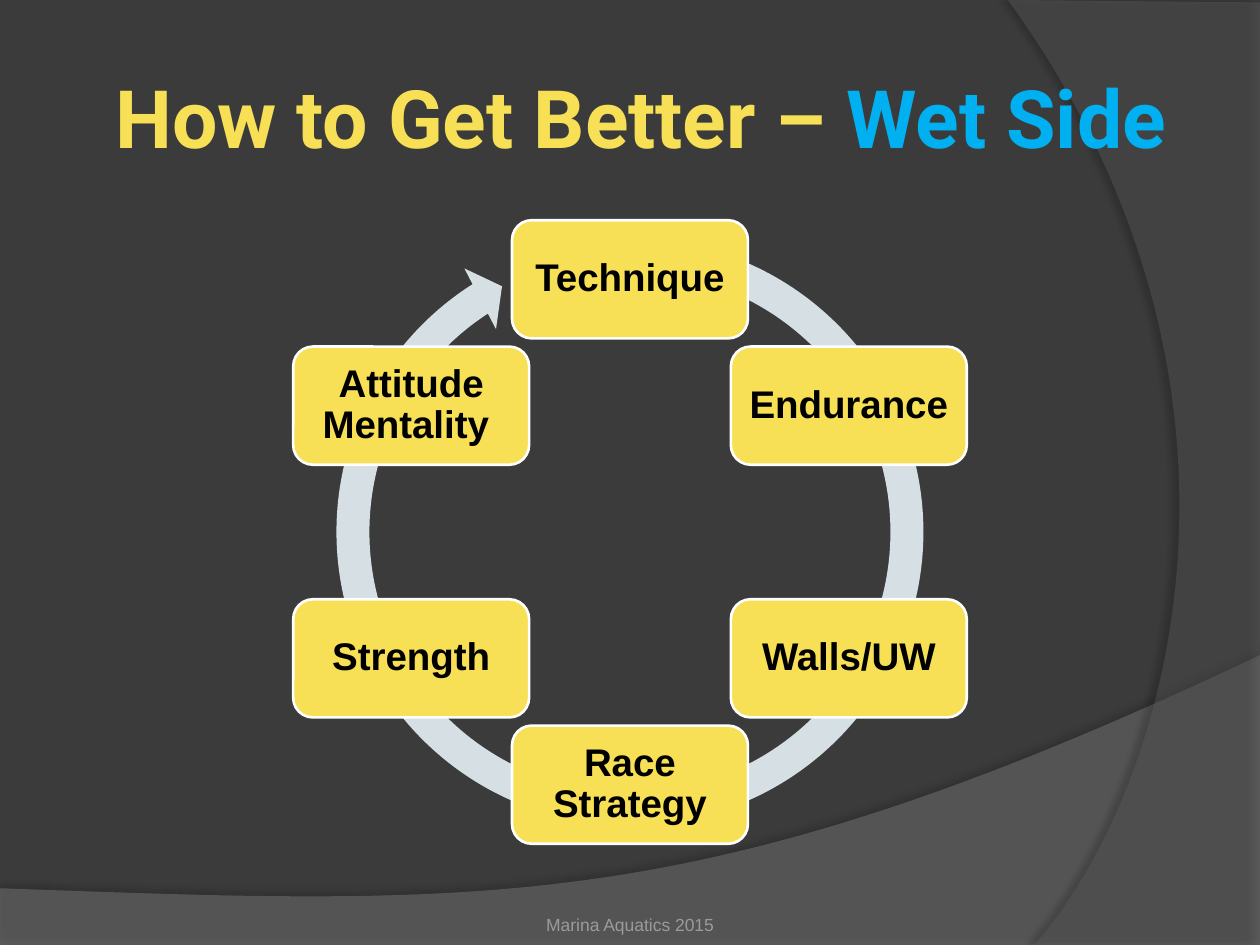
from dataclasses import dataclass
from math import cos, radians, sin

from lxml import etree
from pptx import Presentation
from pptx.dml.color import RGBColor
from pptx.enum.shapes import MSO_SHAPE
from pptx.enum.text import MSO_ANCHOR, PP_ALIGN
from pptx.oxml.ns import qn
from pptx.util import Pt

CENTER = PP_ALIGN.CENTER
MIDDLE = MSO_ANCHOR.MIDDLE
BOTTOM = MSO_ANCHOR.BOTTOM
ROUNDED = MSO_SHAPE.ROUNDED_RECTANGLE
CIRCULAR_ARROW = MSO_SHAPE.CIRCULAR_ARROW

CHARCOAL = RGBColor(0x3B, 0x3B, 0x3B)
WAVE_GRAY = RGBColor(0x7F, 0x7F, 0x7F)
CURVE_GRAY = RGBColor(0x5E, 0x5E, 0x5E)
YELLOW = RGBColor(0xF7, 0xDF, 0x56)
BLUE = RGBColor(0x00, 0xB0, 0xF0)
PALE_BLUE = RGBColor(0xD5, 0xDF, 0xE4)
WHITE = RGBColor(0xFF, 0xFF, 0xFF)
BLACK = RGBColor(0x00, 0x00, 0x00)
FOOTER_GRAY = RGBColor(0x9D, 0x9B, 0x9A)

CENTER_X, CENTER_Y, RADIUS = 360, 304, 144.4
NODE_WIDTH, NODE_HEIGHT = 134.8, 67.5
ARROW_SIZE = 355.7
ARROW_ADJUSTMENTS = (0.053, 3.126, 142.371, 171.218, 0.055)
TOPICS = ("Technique", "Endurance", "Walls/UW", "Race Strategy", "Strength", "Attitude Mentality ")
CURVE_STEPS = 60

Point = tuple[float, float]


@dataclass(frozen=True)
class Span:
    text: str
    font: str
    size: float
    color: RGBColor
    bold: bool = False


@dataclass(frozen=True)
class Label:
    left: float
    top: float
    width: float
    height: float
    anchor: MSO_ANCHOR
    margins: tuple[float, float, float, float]
    spans: tuple[Span, ...]


@dataclass(frozen=True)
class Backdrop:
    corners: tuple[Point, ...]
    curve: tuple[Point, Point, Point]
    color: RGBColor
    opacity: int
    shadow_opacity: int
    shadow_distance: float
    shadow_angle: int


BACKDROPS = (
    Backdrop(((0, 507.6), (0, 540), (720, 540), (720, 374.4)),
             ((402.5, 524.9), (281.5, 517.7), (0, 507.6)), WAVE_GRAY, 45, 35, 3.5, 270),
    Backdrop(((720, 1.4), (720, 540), (591.1, 540)),
             ((673.2, 445.7), (733, 216), (576, 0)), CURVE_GRAY, 40, 45, 4, 180),
)
LABELS = (
    Label(36, 21.6, 660.2, 90, MIDDLE, (3.6, 3.6, 3.6, 3.6),
          (Span("How to Get Better – ", "Roboto", 46, YELLOW, True),
           Span("Wet Side", "Roboto", 46, BLUE, True))),
    Label(246, 505.4, 228, 28.8, BOTTOM, (0, 3.6, 0, 0),
          (Span("Marina Aquatics 2015", "Arial", 10, FOOTER_GRAY),)),
)


def curve_points(start: Point, curve: tuple[Point, Point, Point]) -> list[Point]:
    points = []
    for step in range(1, CURVE_STEPS + 1):
        t = step / CURVE_STEPS
        weights = ((1 - t) ** 3, 3 * t * (1 - t) ** 2, 3 * t * t * (1 - t), t ** 3)
        x, y = (sum(w * p[axis] for w, p in zip(weights, (start, *curve))) for axis in (0, 1))
        points.append((Pt(x), Pt(y)))
    return points


def add_alpha(color_element, percent: int) -> None:
    etree.SubElement(color_element, qn("a:alpha"), val=str(percent * 1000))


def draw_backdrop(page, backdrop: Backdrop) -> None:
    first, *others = backdrop.corners
    builder = page.shapes.build_freeform(Pt(first[0]), Pt(first[1]))
    builder.add_line_segments([(Pt(x), Pt(y)) for x, y in others], close=False)
    builder.add_line_segments(curve_points(others[-1], backdrop.curve))
    shape = builder.convert_to_shape()
    shape.fill.solid()
    shape.fill.fore_color.rgb = backdrop.color
    shape.line.fill.background()
    shape.shadow.inherit = False
    properties = shape.element.spPr
    add_alpha(properties.find(qn("a:solidFill"))[0], backdrop.opacity)
    shadow = etree.SubElement(
        properties.find(qn("a:effectLst")), qn("a:outerShdw"), blurRad=str(Pt(4)),
        dist=str(Pt(backdrop.shadow_distance)), dir=str(backdrop.shadow_angle * 60000),
        algn="ctr", rotWithShape="0")
    add_alpha(etree.SubElement(shadow, qn("a:srgbClr"), val=str(BLACK)), backdrop.shadow_opacity)


def write_text(shape, label: Label, line_spacing: float = 1.0) -> None:
    frame = shape.text_frame
    frame.word_wrap = True
    frame.vertical_anchor = label.anchor
    (frame.margin_left, frame.margin_top,
     frame.margin_right, frame.margin_bottom) = map(Pt, label.margins)
    para = frame.paragraphs[0]
    para.alignment = CENTER
    para.line_spacing = line_spacing
    for span in label.spans:
        run = para.add_run()
        run.text = span.text
        run.font.name = span.font
        run.font.size = Pt(span.size)
        run.font.bold = span.bold
        run.font.color.rgb = span.color


def draw_label(page, label: Label) -> None:
    box = page.shapes.add_textbox(Pt(label.left), Pt(label.top), Pt(label.width), Pt(label.height))
    write_text(box, label)


def draw_cycle_arrow(page) -> None:
    half = ARROW_SIZE / 2
    arrow = page.shapes.add_shape(CIRCULAR_ARROW, Pt(CENTER_X - half), Pt(CENTER_Y - half),
                                  Pt(ARROW_SIZE), Pt(ARROW_SIZE))
    for index, value in enumerate(ARROW_ADJUSTMENTS):
        arrow.adjustments[index] = value
    arrow.fill.solid()
    arrow.fill.fore_color.rgb = PALE_BLUE
    arrow.line.fill.background()
    arrow.shadow.inherit = False


def draw_node(page, topic: str, angle: float) -> None:
    left = CENTER_X + RADIUS * sin(angle) - NODE_WIDTH / 2
    top = CENTER_Y - RADIUS * cos(angle) - NODE_HEIGHT / 2
    label = Label(left, top, NODE_WIDTH, NODE_HEIGHT, MIDDLE, (3.3, 3.3, 3.3, 3.3),
                  (Span(topic, "Arial", 22, BLACK, True),))
    node = page.shapes.add_shape(ROUNDED, Pt(left), Pt(top), Pt(NODE_WIDTH), Pt(NODE_HEIGHT))
    node.fill.solid()
    node.fill.fore_color.rgb = YELLOW
    node.line.color.rgb = WHITE
    node.line.width = Pt(1.5)
    node.shadow.inherit = False
    write_text(node, label, 0.9)


def main() -> None:
    deck = Presentation()
    deck.slide_width, deck.slide_height = Pt(720), Pt(540)
    page = deck.slides.add_slide(deck.slide_layouts[6])
    page.background.fill.solid()
    page.background.fill.fore_color.rgb = CHARCOAL
    for backdrop in BACKDROPS:
        draw_backdrop(page, backdrop)
    draw_cycle_arrow(page)
    for index, topic in enumerate(TOPICS):
        draw_node(page, topic, radians(index * 360 / len(TOPICS)))
    for label in LABELS:
        draw_label(page, label)
    deck.save("out.pptx")


if __name__ == "__main__":
    main()
